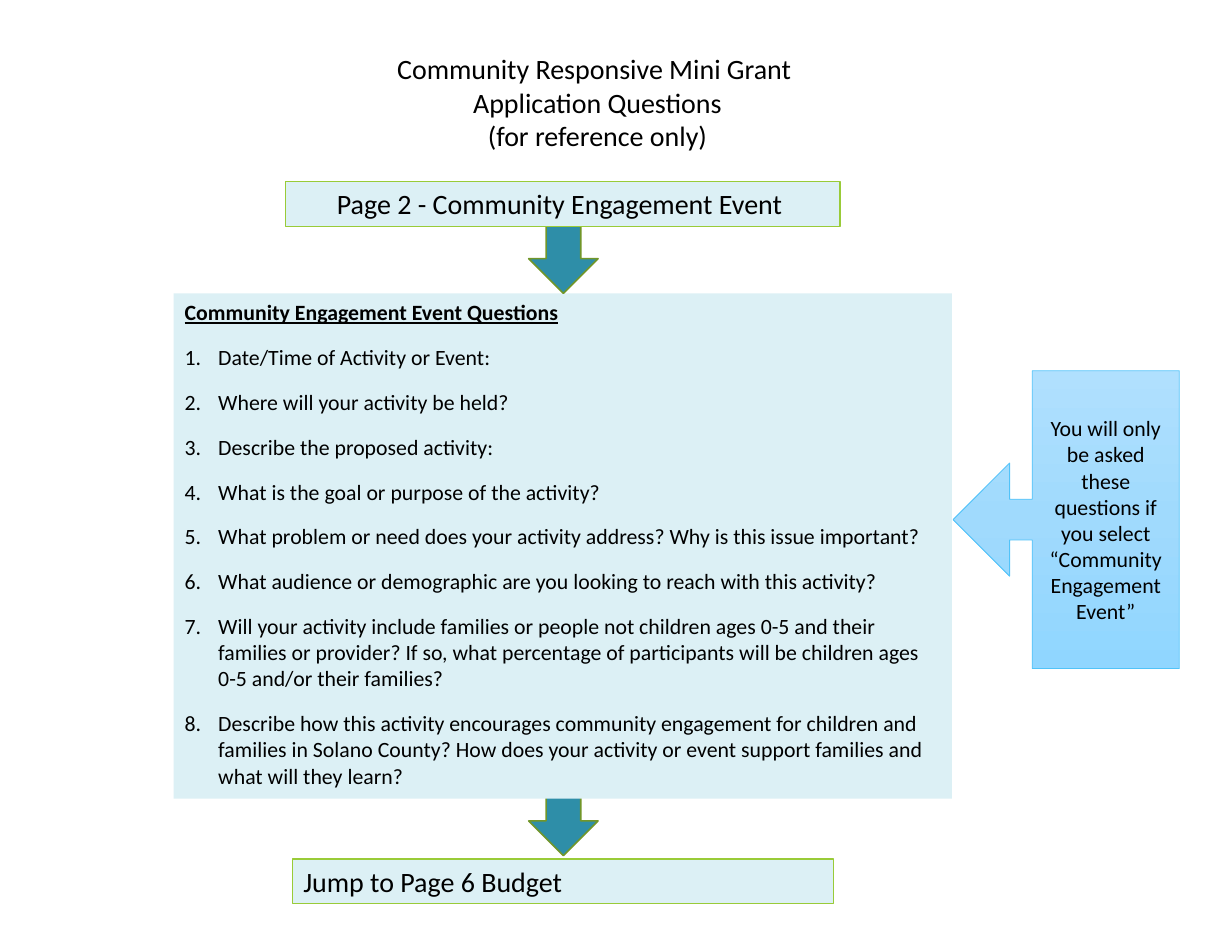
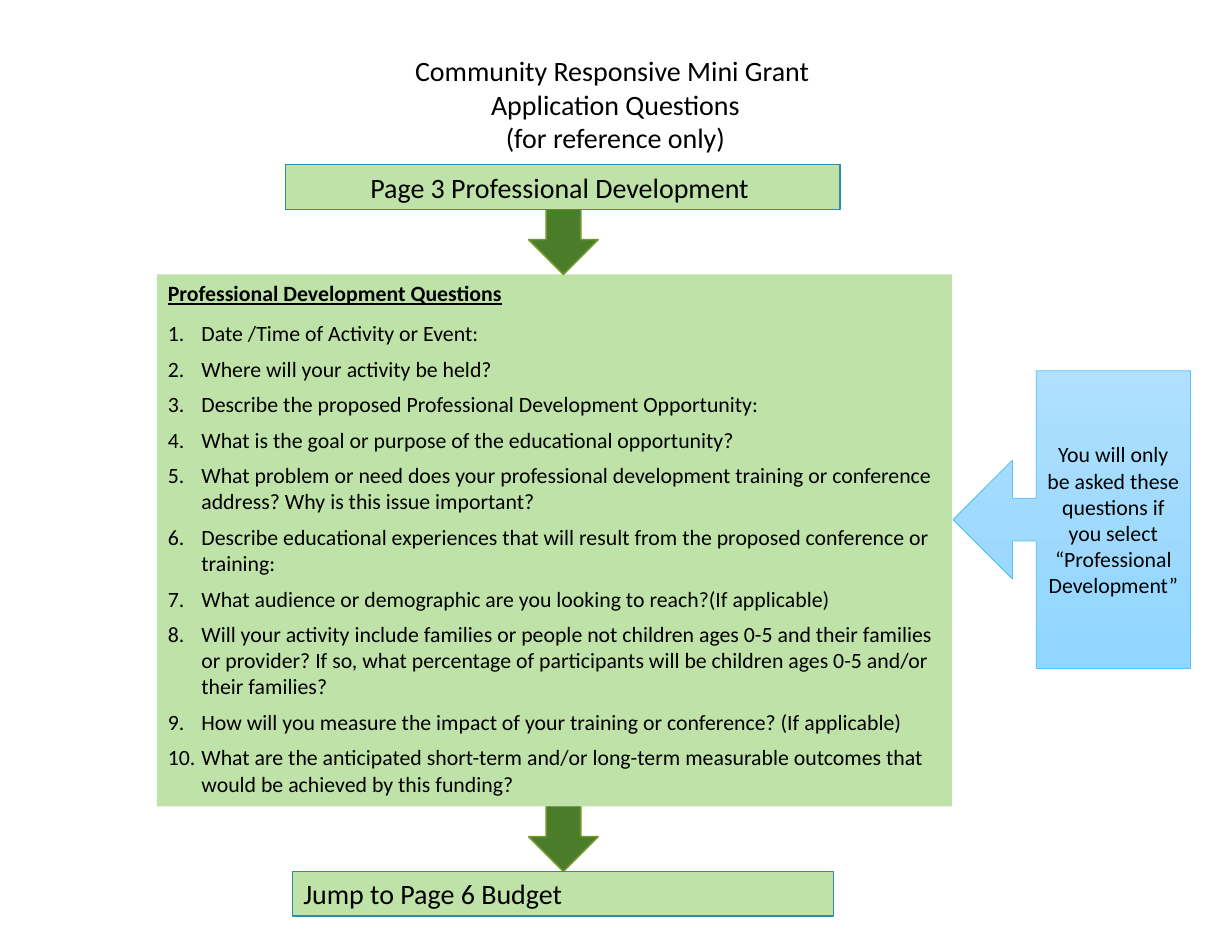
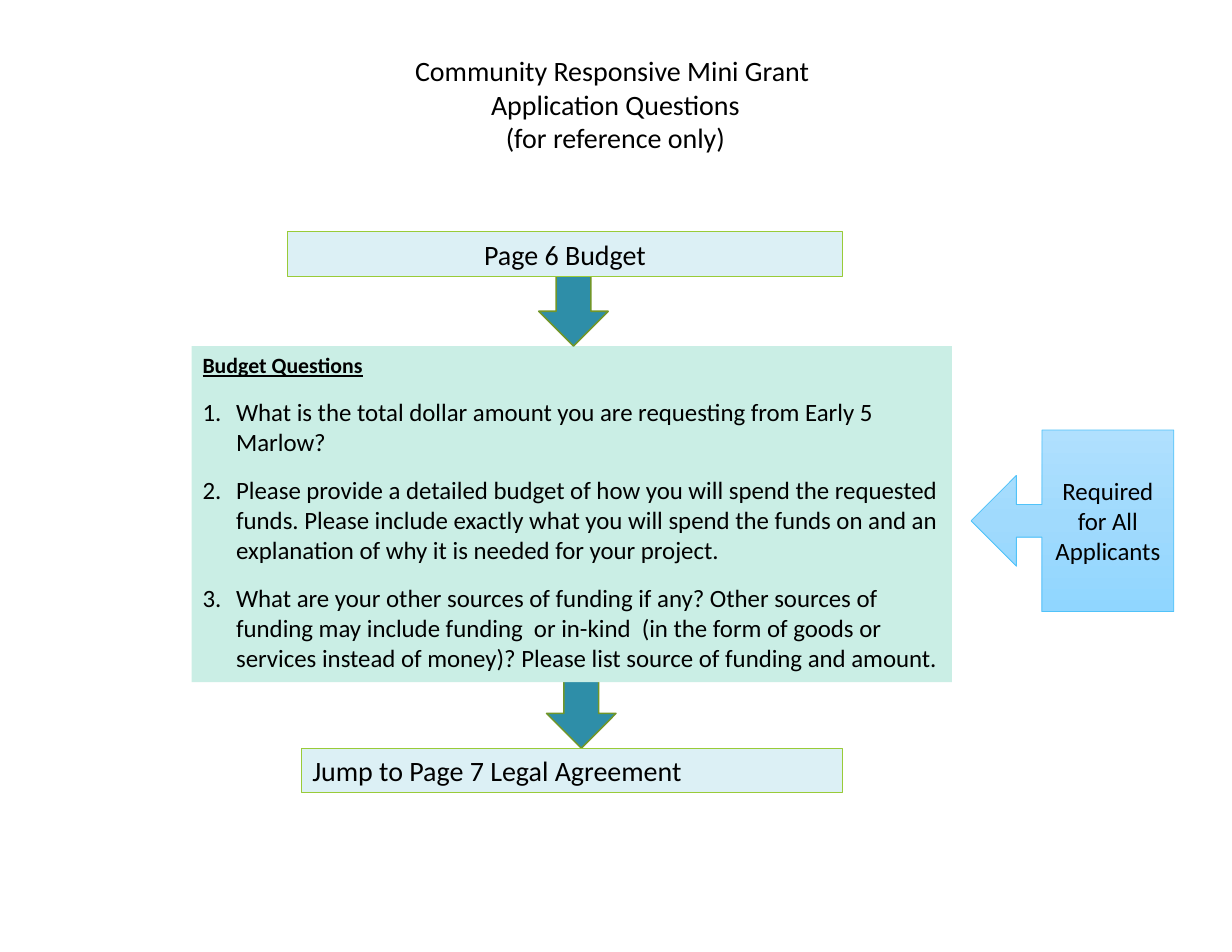
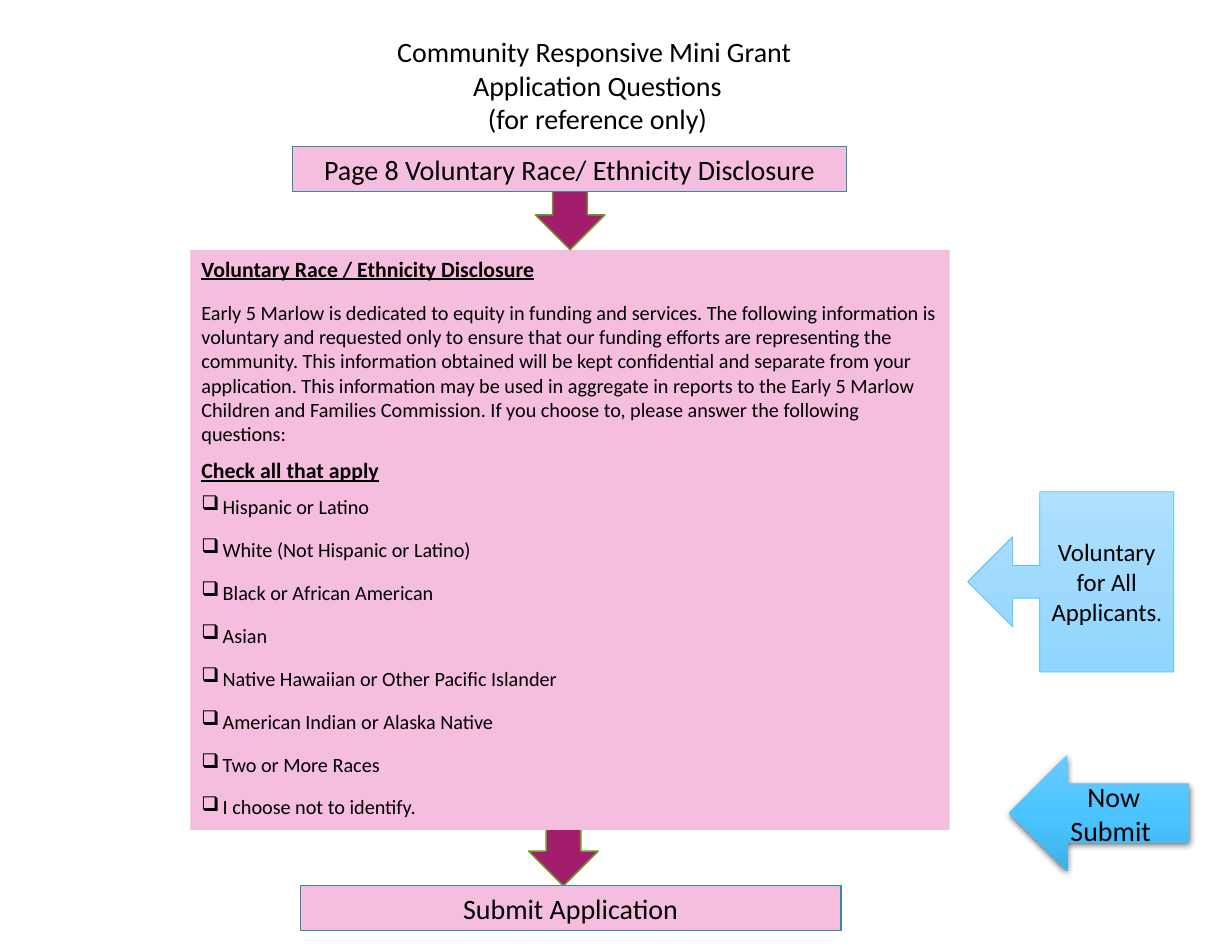
from copy import deepcopy

from lxml.etree import SubElement
from pptx import Presentation
from pptx.dml.color import RGBColor
from pptx.enum.shapes import MSO_SHAPE
from pptx.enum.text import MSO_ANCHOR, MSO_AUTO_SIZE, PP_ALIGN
from pptx.oxml.ns import qn
from pptx.util import Inches, Pt

FONT = "Calibri"
BLACK = RGBColor(0x00, 0x00, 0x00)
TEAL = RGBColor(0x2E, 0x8E, 0xA8)
PALE_BLUE = RGBColor(0xDC, 0xF0, 0xF5)
MINT = RGBColor(0xCA, 0xEE, 0xE5)
LIME = RGBColor(0x99, 0xCB, 0x38)
OLIVE = RGBColor(0x71, 0x96, 0x29)
GREEN = RGBColor(0x4A, 0x7C, 0x29)
PALE_GREEN = RGBColor(0xBF, 0xE2, 0xA8)
PLUM = RGBColor(0xA3, 0x1D, 0x6D)
PINK = RGBColor(0xF5, 0xBE, 0xDF)
SKY_EDGE = RGBColor(0x51, 0xC3, 0xF9)
SKY = [RGBColor(0xB0, 0xE0, 0xFE), RGBColor(0xA0, 0xDA, 0xFD), RGBColor(0x90, 0xD6, 0xFF)]
BRIGHT_SKY = [RGBColor(0x6B, 0xCA, 0xFC), RGBColor(0x4B, 0xC5, 0xFF), RGBColor(0x40, 0xB0, 0xE5)]

TITLE_LINES = ["Community Responsive Mini Grant ", "Application Questions", "(for reference only)"]
EVENT_QUESTIONS = [
    "Date/Time of Activity or Event:",
    "Where will your activity be held?",
    "Describe the proposed activity:",
    "What is the goal or purpose of the activity?",
    "What problem or need does your activity address? Why is this issue important?",
    "What audience or demographic are you looking to reach with this activity?",
    "Will your activity include families or people not children ages 0-5 and their families or "
    "provider? If so, what percentage of participants will be children ages 0-5 and/or their families?",
    "Describe how this activity encourages community engagement for children and families in Solano "
    "County? How does your activity or event support families and what will they learn?",
]
DEVELOPMENT_QUESTIONS = [
    "Date /Time of Activity or Event:",
    EVENT_QUESTIONS[1],
    "Describe the proposed Professional Development Opportunity:",
    "What is the goal or purpose of the educational opportunity?",
    "What problem or need does your professional development training or conference address? "
    "Why is this issue important?",
    "Describe educational experiences that will result from the proposed conference or training:",
    "What audience or demographic are you looking to reach?(If applicable)",
    EVENT_QUESTIONS[6],
    "How will you measure the impact of your training or conference? (If applicable)",
    "What are the anticipated short-term and/or long-term measurable outcomes that would be "
    "achieved by this funding?",
]
BUDGET_QUESTIONS = [
    "What is the total dollar amount you are requesting from Early 5 Marlow?",
    "Please provide a detailed budget of how you will spend the requested funds. Please include "
    "exactly what you will spend the funds on and an explanation of why it is needed for your project.",
    "What are your other sources of funding if any? Other sources of funding may include funding  or "
    "in-kind  (in the form of goods or services instead of money)? Please list source of funding and amount.",
]
DISCLOSURE_TEXT = (
    "Early 5 Marlow is dedicated to equity in funding and services. The following information is "
    "voluntary and requested only to ensure that our funding efforts are representing the community. "
    "This information obtained will be kept confidential and separate from your application. This "
    "information may be used in aggregate in reports to the Early 5 Marlow Children and Families "
    "Commission. If you choose to, please answer the following questions:"
)
ETHNICITIES = [
    "Hispanic or Latino", "White (Not Hispanic or Latino)", "Black or African American", "Asian",
    "Native Hawaiian or Other Pacific Islander", "American Indian or Alaska Native",
    "Two or More Races", "I choose not to identify.",
]


def format_paragraph(para, size, align=PP_ALIGN.LEFT, gap=0, heading=False):
    para.alignment = align
    para.space_before = para.space_after = Pt(gap)
    for span in para.runs:
        font = span.font
        font.name, font.size, font.color.rgb = FONT, Pt(size), BLACK
        font.bold = font.underline = heading


def add_paragraph(frame, text, size, **style):
    """Add a paragraph, using the empty first one if there is no text yet."""
    para = frame.add_paragraph() if frame.text else frame.paragraphs[0]
    para.text = text
    format_paragraph(para, size, **style)
    return para


def add_list(frame, items, size, gap, indent, tag, **bullet):
    for item in items:
        properties = add_paragraph(frame, item, size, gap=gap)._p.get_or_add_pPr()
        properties.set("marL", str(Inches(indent)))
        properties.set("indent", str(-Inches(indent)))
        SubElement(properties, qn(tag), bullet)


def add_questions(frame, items, size=14, gap=6):
    add_list(frame, items, size, gap, 0.3, "a:buAutoNum", type="arabicPeriod")


def add_box(page, kind, box, fill=None, edge=None, weight=0.75):
    shape = page.shapes.add_shape(kind, *map(Inches, box))
    shape.shadow.inherit = False
    if fill is not None:
        shape.fill.solid()
        shape.fill.fore_color.rgb = fill
    if edge is None:
        shape.line.fill.background()
    else:
        shape.line.color.rgb = edge
        shape.line.width = Pt(weight)
    shape.text_frame.word_wrap = True
    return shape


def shade(shape, colors):
    """Fill the shape from top to bottom with evenly spaced colours."""
    shape.fill.gradient()
    shape.fill.gradient_angle = 270
    stop_list = shape._element.spPr.find(qn("a:gradFill")).find(qn("a:gsLst"))
    while len(stop_list) < len(colors):
        stop_list.append(deepcopy(stop_list[-1]))
    for index, (stop, color) in enumerate(zip(shape.fill.gradient_stops, colors)):
        stop.position = index / (len(colors) - 1)
        stop.color.rgb = color


def add_title(page, left, top):
    title = page.shapes.title
    title.left, title.top, title.width, title.height = map(Inches, (left, top, 4.95, 1.01))
    frame = title.text_frame
    frame.word_wrap = True
    frame.auto_size = MSO_AUTO_SIZE.SHAPE_TO_FIT_TEXT
    frame.vertical_anchor = MSO_ANCHOR.TOP
    for line in TITLE_LINES:
        add_paragraph(frame, line, 18, align=PP_ALIGN.CENTER)


def add_flow_arrow(page, center, tip, length, color):
    """Add a downward arrow whose point is at (center, tip)."""
    breadth = 0.62
    box = (center - length / 2, tip - length / 2 - breadth / 2, length, breadth)
    add_box(page, MSO_SHAPE.RIGHT_ARROW, box, color, OLIVE, 1).rotation = 90


def add_top_frame(page, box, fill, edge=None):
    shape = add_box(page, MSO_SHAPE.RECTANGLE, box, fill, edge)
    frame = shape.text_frame
    frame.vertical_anchor = MSO_ANCHOR.TOP
    frame.auto_size = MSO_AUTO_SIZE.SHAPE_TO_FIT_TEXT
    return frame


def add_bar(page, left, top, width, text, fill, edge, align=PP_ALIGN.CENTER):
    frame = add_top_frame(page, (left, top, width, 0.4), fill, edge)
    add_paragraph(frame, text, 18, align=align, gap=6)


def add_callout(page, box, text, size):
    shape = add_box(page, MSO_SHAPE.LEFT_ARROW_CALLOUT, box, edge=SKY_EDGE, weight=0.5)
    for index, value in enumerate((0.18, 0.25, 0.25, 0.65)):
        shape.adjustments[index] = value
    shade(shape, SKY)
    shape.text_frame.vertical_anchor = MSO_ANCHOR.MIDDLE
    return add_paragraph(shape.text_frame, text, size, align=PP_ALIGN.CENTER)


def add_flow_page(deck, title, header, panel, footer, arrows, colors, footer_align=PP_ALIGN.LEFT):
    """Build the title, bars, arrows and panel heading; return the page and panel text.

    header and footer are (left, top, text), panel is (box, heading),
    arrows is (upper center, lower center, lower tip),
    colors is (arrow, bar, bar edge, panel).
    """
    page = deck.slides.add_slide(deck.slide_layouts[5])
    arrow_color, bar_color, edge, panel_color = colors
    box, heading = panel
    upper_center, lower_center, lower_tip = arrows
    add_flow_arrow(page, lower_center, lower_tip, 1.25, arrow_color)
    frame = add_top_frame(page, box, panel_color)
    add_paragraph(frame, heading, 14, gap=6, heading=True)
    add_title(page, *title)
    add_flow_arrow(page, upper_center, box[1], 0.66, arrow_color)
    for (left, top, text), width, align in ((header, 4.95, PP_ALIGN.CENTER), (footer, 4.83, footer_align)):
        add_bar(page, left, top, width, text, bar_color, edge, align)
    return page, frame


def build_event_page(deck):
    page, frame = add_flow_page(
        deck, (2.86, 0.41), (2.55, 1.62, "Page 2 - Community Engagement Event "),
        ((1.55, 2.62, 6.95, 4.51), "Community Engagement Event Questions"),
        (2.61, 7.67, "Jump to Page 6 Budget"), (5.03, 5.03, 7.64),
        (TEAL, PALE_BLUE, LIME, PALE_BLUE))
    add_questions(frame, EVENT_QUESTIONS)
    add_callout(page, (8.51, 3.31, 2.02, 2.66),
                "You will only be asked these questions if you select “Community Engagement Event”", 14)


def build_development_page(deck):
    page, frame = add_flow_page(
        deck, (3.02, 0.43), (2.55, 1.47, "Page 3 Professional Development "),
        ((1.4, 2.45, 7.1, 4.75), "Professional Development Questions"),
        (2.61, 7.78, "Jump to Page 6 Budget"), (5.03, 5.03, 7.78),
        (GREEN, PALE_GREEN, TEAL, PALE_GREEN))
    add_questions(frame, DEVELOPMENT_QUESTIONS, gap=3)
    add_callout(page, (8.51, 3.31, 2.12, 2.66),
                "You will only be asked these questions if you select “Professional Development”", 14)


def build_budget_page(deck):
    page, frame = add_flow_page(
        deck, (3.02, 0.43), (2.57, 2.07, "Page 6 Budget"),
        ((1.71, 3.09, 6.79, 3), "Budget Questions"),
        (2.69, 6.68, "Jump to Page 7 Legal Agreement"), (5.12, 5.19, 6.68),
        (TEAL, PALE_BLUE, LIME, MINT))
    add_questions(frame, BUDGET_QUESTIONS, size=16)
    add_callout(page, (8.67, 3.84, 1.81, 1.62), "Required for All Applicants", 16)


def add_submit_arrow(page, box):
    arrow = add_box(page, MSO_SHAPE.LEFT_ARROW, box)
    shade(arrow, BRIGHT_SKY)
    effects = arrow._element.spPr.find(qn("a:effectLst"))
    shadow = SubElement(effects, qn("a:outerShdw"), blurRad=str(Pt(4.5)), dist=str(Pt(1.5)),
                        dir="5400000", rotWithShape="0")
    color = SubElement(shadow, qn("a:srgbClr"), val=str(BLACK))
    SubElement(color, qn("a:alpha"), val="63000")
    arrow.text_frame.vertical_anchor = MSO_ANCHOR.MIDDLE
    for line in ("Now", "Submit "):
        add_paragraph(arrow.text_frame, line, 18, align=PP_ALIGN.CENTER)


def build_disclosure_page(deck):
    page, frame = add_flow_page(
        deck, (2.86, 0.26), (2.61, 1.31, "Page 8 Voluntary Race/ Ethnicity Disclosure"),
        ((1.7, 2.23, 6.78, 5.18), "Voluntary Race / Ethnicity Disclosure"),
        (2.68, 7.91, "Submit Application"), (5.09, 5.03, 7.91),
        (PLUM, PINK, TEAL, PINK), PP_ALIGN.CENTER)
    add_paragraph(frame, DISCLOSURE_TEXT, 13, gap=6)
    add_paragraph(frame, "Check all that apply", 14, gap=1, heading=True)
    add_list(frame, ETHNICITIES, 13, 6, 0.19, "a:buChar", char="❑")
    para = add_callout(page, (8.64, 4.39, 1.84, 1.61), "Voluntary for All Applicants", 16)
    period = para.add_run()
    period.text = ". "
    format_paragraph(para, 16, PP_ALIGN.CENTER)
    period.font.size = Pt(14)
    add_submit_arrow(page, (9.01, 6.74, 1.61, 1.04))


def main():
    deck = Presentation()
    deck.slide_width, deck.slide_height = Inches(11), Inches(8.5)
    build_event_page(deck)
    build_development_page(deck)
    build_budget_page(deck)
    build_disclosure_page(deck)
    deck.save("out.pptx")


if __name__ == "__main__":
    main()
